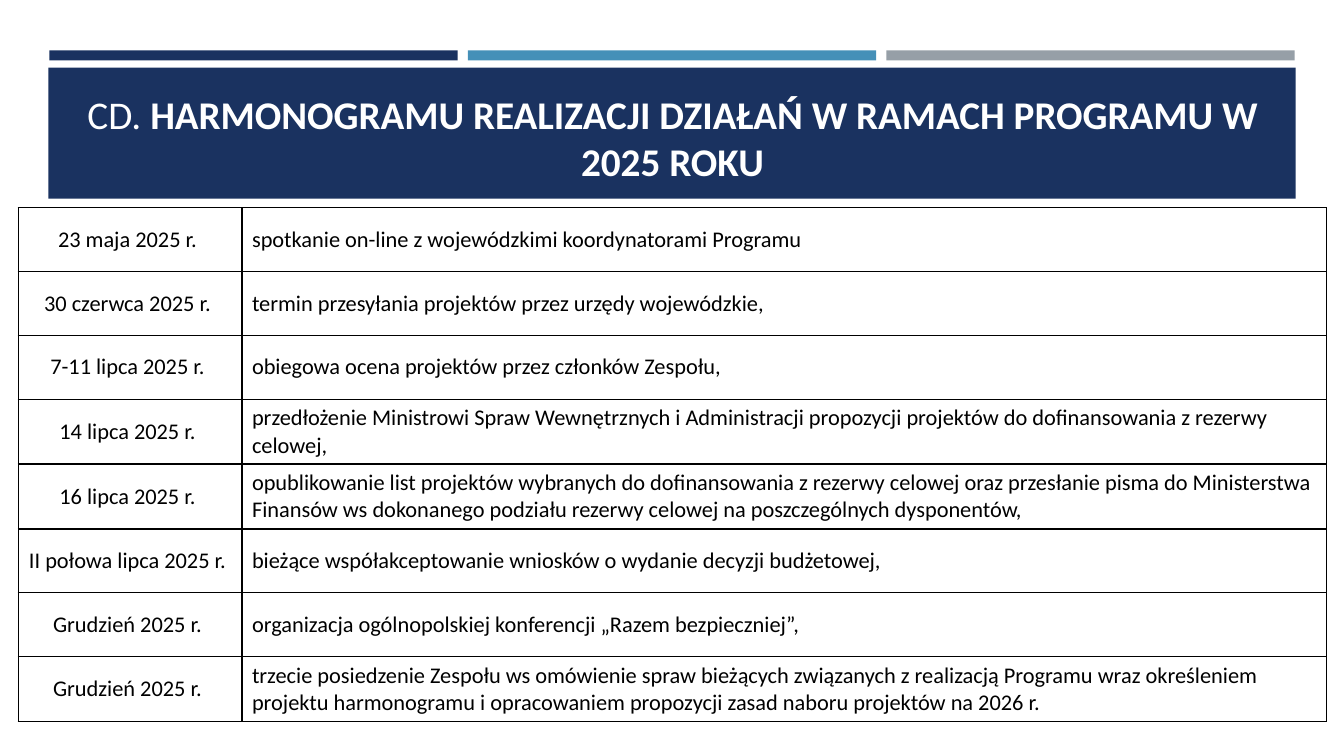
from dataclasses import dataclass

from pptx import Presentation
from pptx import util as u
from pptx.dml.color import RGBColor
from pptx.enum import shapes, text
from pptx.oxml import parse_xml
from pptx.oxml.ns import nsdecls


@dataclass(frozen=True)
class Theme:
    font: str = "Calibri"
    title_size: int = 28
    table_size: int = 16
    border_width: int = 1
    navy: str = "1A3260"
    blue: str = "4590B8"
    grey: str = "969FA7"
    white: str = "FFFFFF"
    black: str = "000000"


TITLE_SPANS = [
    ("CD. ", False),
    ("HARMONOGRAMU REALIZACJI DZIAŁAŃ W RAMACH PROGRAMU W 2025 ROKU", True),
]

SCHEDULE = [
    ("23 maja 2025 r. ", "spotkanie on-line z wojewódzkimi koordynatorami Programu"),
    ("30 czerwca 2025 r. ", "termin przesyłania projektów przez urzędy wojewódzkie,"),
    ("7-11 lipca 2025 r. ", "obiegowa ocena projektów przez członków Zespołu,"),
    ("14 lipca 2025 r. ",
     "przedłożenie Ministrowi Spraw Wewnętrznych i Administracji propozycji "
     "projektów do dofinansowania z rezerwy celowej,"),
    ("16 lipca 2025 r. ",
     "opublikowanie list projektów wybranych do dofinansowania z rezerwy celowej "
     "oraz przesłanie pisma do Ministerstwa Finansów ws dokonanego podziału "
     "rezerwy celowej na poszczególnych dysponentów,"),
    ("II połowa lipca 2025 r. ",
     "bieżące współakceptowanie wniosków o wydanie decyzji budżetowej,"),
    ("Grudzień 2025 r. ",
     "organizacja ogólnopolskiej konferencji „Razem bezpieczniej”,"),
    ("Grudzień 2025 r. ",
     "trzecie posiedzenie Zespołu ws omówienie spraw bieżących związanych "
     "z realizacją Programu wraz określeniem projektu harmonogramu i opracowaniem "
     "propozycji zasad naboru projektów na 2026 r."),
]


class SlideBuilder:
    def __init__(self, page, theme):
        self.page = page
        self.theme = theme

    def style_span(self, span, size, color, bold=False):
        span.font.name = self.theme.font
        span.font.size = u.Pt(size)
        span.font.bold = bold
        span.font.color.rgb = RGBColor.from_string(color)

    def bar(self, left, top, width, height, color):
        box = self.page.shapes.add_shape(
            shapes.MSO_SHAPE.RECTANGLE,
            *(u.Inches(length) for length in (left, top, width, height)))
        box.shadow.inherit = False
        box.fill.solid()
        box.fill.fore_color.rgb = RGBColor.from_string(color)
        box.line.fill.background()

    def title(self, spans, left, top, width, height):
        """Fill the title placeholder and bring it in front of the bars."""
        box = self.page.shapes.title
        box.left, box.top = u.Inches(left), u.Inches(top)
        box.width, box.height = u.Inches(width), u.Inches(height)
        frame = box.text_frame
        frame.word_wrap = True
        frame.auto_size = text.MSO_AUTO_SIZE.NONE
        frame.vertical_anchor = text.MSO_ANCHOR.BOTTOM
        para = frame.paragraphs[0]
        para.alignment = text.PP_ALIGN.CENTER
        for wording, bold in spans:
            span = para.add_run()
            span.text = wording
            self.style_span(span, self.theme.title_size, self.theme.white, bold)
        box.element.getparent().append(box.element)

    def cell(self, cell, wording, alignment):
        cell.text_frame.text = wording
        cell.vertical_anchor = text.MSO_ANCHOR.MIDDLE
        para = cell.text_frame.paragraphs[0]
        para.alignment = alignment
        self.style_span(para.runs[0], self.theme.table_size, self.theme.black)
        properties = cell._tc.get_or_add_tcPr()
        for side in ("lnL", "lnR", "lnT", "lnB"):
            properties.append(parse_xml(
                f'<a:{side} {nsdecls("a")} w="{u.Pt(self.theme.border_width)}">'
                f'<a:solidFill><a:srgbClr val="{self.theme.black}"/></a:solidFill>'
                f'</a:{side}>'))
        cell.fill.background()

    def table(self, rows, left, top, column_widths, height):
        table = self.page.shapes.add_table(
            len(rows), len(column_widths), u.Inches(left), u.Inches(top),
            u.Inches(sum(column_widths)), u.Inches(height)).table
        table.first_row = table.horz_banding = False
        for column, width in zip(table.columns, column_widths):
            column.width = u.Inches(width)
        alignments = (text.PP_ALIGN.CENTER, text.PP_ALIGN.LEFT)
        for row, wordings in zip(table.rows, rows):
            for cell, wording, alignment in zip(row.cells, wordings, alignments):
                self.cell(cell, wording, alignment)


def main():
    deck = Presentation()
    deck.slide_width, deck.slide_height = u.Inches(13.33), u.Inches(7.5)
    title_only = deck.slide_layouts[5]
    theme = Theme()
    builder = SlideBuilder(deck.slides.add_slide(title_only), theme)

    for index, color in enumerate((theme.navy, theme.blue, theme.grey)):
        builder.bar(0.49 + index * 4.15, 0.5, 4.05, 0.1, color)
    builder.bar(0.48, 0.67, 12.37, 1.3, theme.navy)
    builder.title(TITLE_SPANS, 0.64, 0.77, 12.06, 1.11)
    builder.table(SCHEDULE, 0.18, 2.06, (2.22, 10.76), 5.07)
    deck.save("out.pptx")


if __name__ == "__main__":
    main()
